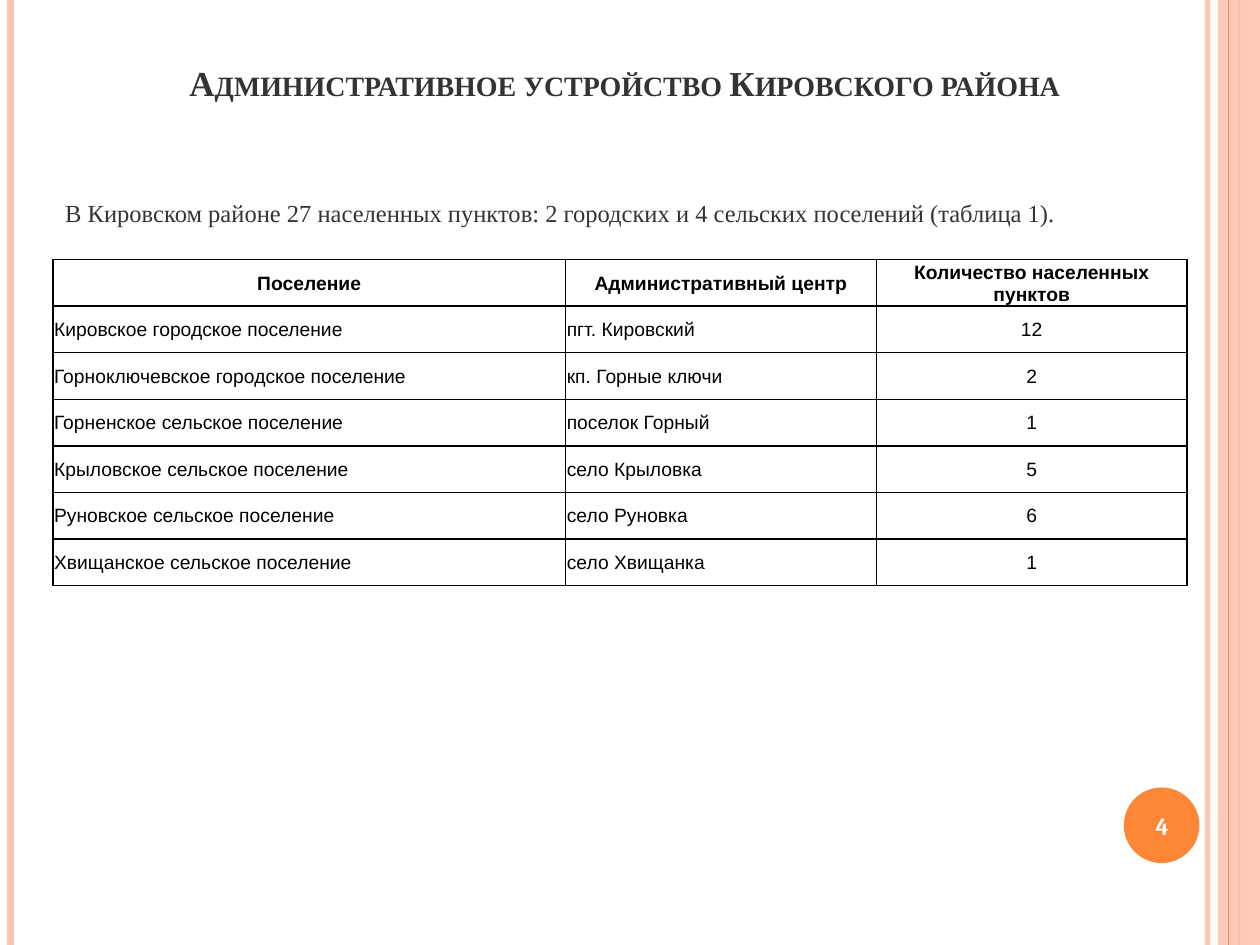
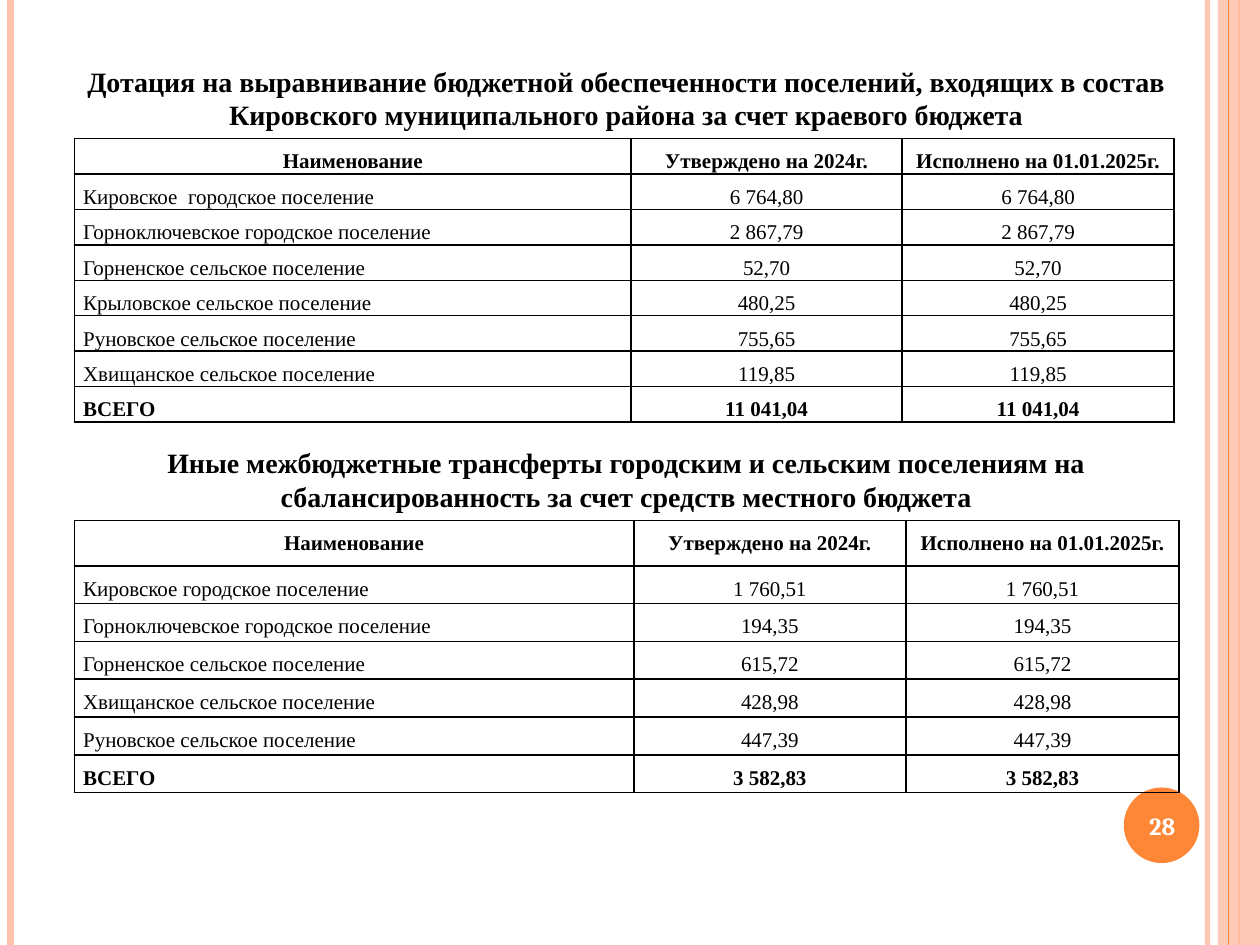
import pptx
import pptx.dml.color
import pptx.enum.shapes
import pptx.enum.text
import pptx.oxml.ns
import pptx.oxml.xmlchemy
import pptx.util

Pt = pptx.util.Pt
qn = pptx.oxml.ns.qn
new_element = pptx.oxml.xmlchemy.OxmlElement
ALIGN = pptx.enum.text.PP_ALIGN
ANCHOR = pptx.enum.text.MSO_ANCHOR
SHAPE = pptx.enum.shapes.MSO_SHAPE

WIDTH, HEIGHT = 720, 540
PEACH, ORANGE = "FEC3AE", "FE8637"
BLACK, GRAPHITE, WHITE = "000000", "333333", "FFFFFF"
SERIF, SANS, NUMBER_FONT = "Times New Roman", "Arial", "Cambria"
TOTAL = "ВСЕГО"


def rgb(value):
    return pptx.dml.color.RGBColor.from_string(value)


def write(frame, text, font=SERIF, size=14, color=BLACK, bold=False, align=ALIGN.LEFT,
          spacing=None, small_caps=False):
    paragraph = frame.paragraphs[0]
    paragraph.alignment = align
    if spacing:
        paragraph.line_spacing = spacing
    run = paragraph.add_run()
    run.text = text
    run.font.name = font
    run.font.size = Pt(size)
    run.font.bold = bold
    run.font.color.rgb = rgb(color)
    if small_caps:
        run._r.get_or_add_rPr().set("cap", "small")


def set_opacity(shape, percent):
    color = shape._element.find(".//" + qn("a:srgbClr"))
    alpha = new_element("a:alpha")
    alpha.set("val", str(percent * 1000))
    color.append(alpha)


def draw_borders(cell, width=1):
    properties = cell._tc.get_or_add_tcPr()
    for position, side in enumerate(("a:lnL", "a:lnR", "a:lnT", "a:lnB")):
        border = new_element(side)
        border.set("w", str(int(Pt(width))))
        fill = new_element("a:solidFill")
        color = new_element("a:srgbClr")
        color.set("val", BLACK)
        fill.append(color)
        border.append(fill)
        properties.insert(position, border)


class Deck:
    def __init__(self):
        self.presentation = pptx.Presentation()
        self.presentation.slide_width = Pt(WIDTH)
        self.presentation.slide_height = Pt(HEIGHT)
        self.slide = None

    def start_slide(self):
        self.slide = self.presentation.slides.add_slide(self.presentation.slide_layouts[5])
        self.stripe(690, PEACH, 3, opacity=93)
        self.stripe(6, PEACH, 4.5)
        self.stripe(708, ORANGE, 1.5)
        self.block(SHAPE.RECTANGLE, 696, 0, 24, HEIGHT, PEACH, opacity=87)
        self.stripe(702, ORANGE, 0.75)
        self.block(SHAPE.OVAL, 642.2, 450, 43.2, 43.2, ORANGE)

    def stripe(self, x, color, width, opacity=None):
        line = self.slide.shapes.add_connector(
            pptx.enum.shapes.MSO_CONNECTOR.STRAIGHT, Pt(x), Pt(0), Pt(x), Pt(HEIGHT))
        line.line.color.rgb = rgb(color)
        line.line.width = Pt(width)
        line._element.spPr.append(new_element("a:effectLst"))
        if opacity:
            set_opacity(line, opacity)

    def block(self, kind, left, top, width, height, color, opacity=None):
        shape = self.slide.shapes.add_shape(kind, Pt(left), Pt(top), Pt(width), Pt(height))
        shape.shadow.inherit = False
        shape.fill.solid()
        shape.fill.fore_color.rgb = rgb(color)
        shape.line.fill.background()
        if opacity:
            set_opacity(shape, opacity)

    def fill_frame(self, frame, text, anchor, **style):
        frame.word_wrap = True
        frame.auto_size = pptx.enum.text.MSO_AUTO_SIZE.NONE
        frame.vertical_anchor = anchor
        write(frame, text, **style)

    def title(self, text, left, top, width, height, anchor=ANCHOR.TOP, **style):
        title = self.slide.shapes.title
        title.left, title.top = Pt(left), Pt(top)
        title.width, title.height = Pt(width), Pt(height)
        self.fill_frame(title.text_frame, text, anchor, bold=True, align=ALIGN.CENTER, **style)

    def text(self, text, left, top, width, height, anchor=ANCHOR.TOP, **style):
        box = self.slide.shapes.add_textbox(Pt(left), Pt(top), Pt(width), Pt(height))
        self.fill_frame(box.text_frame, text, anchor, **style)

    def page_number(self, number):
        self.text(str(number), 640, 451.4, 48.2, 41, anchor=ANCHOR.MIDDLE,
                  font=NUMBER_FONT, color=WHITE, bold=True, align=ALIGN.CENTER)

    def table(self, rows, left, top, columns, heights, margins, first_centred,
              anchor=ANCHOR.TOP, **style):
        table = self.slide.shapes.add_table(
            len(rows), len(columns), Pt(left), Pt(top), Pt(sum(columns)), Pt(sum(heights))).table
        table.first_row = table.horz_banding = False
        for column, width in zip(table.columns, columns):
            column.width = Pt(width)
        for r, (values, height) in enumerate(zip(rows, heights)):
            table.rows[r].height = Pt(height)
            for c, value in enumerate(values):
                cell = table.cell(r, c)
                cell.fill.background()
                draw_borders(cell)
                cell.vertical_anchor = anchor
                cell.margin_left = cell.margin_right = Pt(margins[0])
                cell.margin_top, cell.margin_bottom = Pt(margins[1]), Pt(0)
                centred = r == 0 or c >= first_centred
                write(cell.text_frame, value, bold=r == 0 or values[0] == TOTAL,
                      align=ALIGN.CENTER if centred else ALIGN.LEFT, **style)

    def budget_table(self, amounts, top, columns, heights):
        header = ("Наименование", "Утверждено на 2024г.", "Исполнено на 01.01.2025г.")
        rows = [header] + [(name, amount, amount) for name, amount in amounts]
        self.table(rows, 42.5, top, columns, heights, (5.04, 0), 1, size=12, spacing=1.5)


SETTLEMENTS = [
    ("Поселение", "Административный центр", "Количество населенных пунктов"),
    ("Кировское городское поселение", "пгт. Кировский", "12"),
    ("Горноключевское городское поселение", "кп. Горные ключи", "2"),
    ("Горненское сельское поселение", "поселок Горный", "1"),
    ("Крыловское сельское поселение", "село Крыловка", "5"),
    ("Руновское сельское поселение", "село Руновка", "6"),
    ("Хвищанское сельское поселение", "село Хвищанка", "1"),
]

GRANTS = [
    ("Кировское  городское поселение", "6 764,80"),
    ("Горноключевское городское поселение", "2 867,79"),
    ("Горненское сельское поселение", "52,70"),
    ("Крыловское сельское поселение", "480,25"),
    ("Руновское сельское поселение", "755,65"),
    ("Хвищанское сельское поселение", "119,85"),
    (TOTAL, "11 041,04"),
]

TRANSFERS = [
    ("Кировское городское поселение", "1 760,51"),
    ("Горноключевское городское поселение", "194,35"),
    ("Горненское сельское поселение", "615,72"),
    ("Хвищанское сельское поселение", "428,98"),
    ("Руновское сельское поселение", "447,39"),
    (TOTAL, "3 582,83"),
]


def main():
    deck = Deck()

    deck.start_slide()
    deck.title("Административное устройство Кировского района", 90, 21.6, 534, 41,
               anchor=ANCHOR.BOTTOM, size=20, color=GRAPHITE, small_caps=True)
    deck.table(SETTLEMENTS, 30.2, 148.4, (293, 177.6, 177.6), [26.6] * 7, (0.72, 0.72), 2,
               anchor=ANCHOR.MIDDLE, font=SANS, size=11)
    deck.page_number(4)
    deck.text("В Кировском районе 27 населенных пунктов: 2 городских и 4 сельских поселений "
              "(таблица 1).", 30.2, 109.4, 656.6, 24.5, color=GRAPHITE)

    deck.start_slide()
    deck.title("Дотация на выравнивание бюджетной обеспеченности поселений, входящих в состав "
               "Кировского муниципального района за счет краевого бюджета",
               42.5, 33.1, 630.7, 46.1, size=16)
    deck.budget_table(GRANTS, 79.2, (318.2, 154.8, 155.5), [20.25] * 8)
    deck.page_number(28)
    deck.text("Иные межбюджетные трансферты городским и сельским поселениям на "
              "сбалансированность за счет средств местного бюджета",
              42.5, 251.3, 630.7, 46.1, size=16, bold=True, align=ALIGN.CENTER)
    deck.budget_table(TRANSFERS, 297.4, (319.7, 155.5, 156.2), [25.9] + [21.6] * 6)

    deck.presentation.save("out.pptx")


if __name__ == "__main__":
    main()
